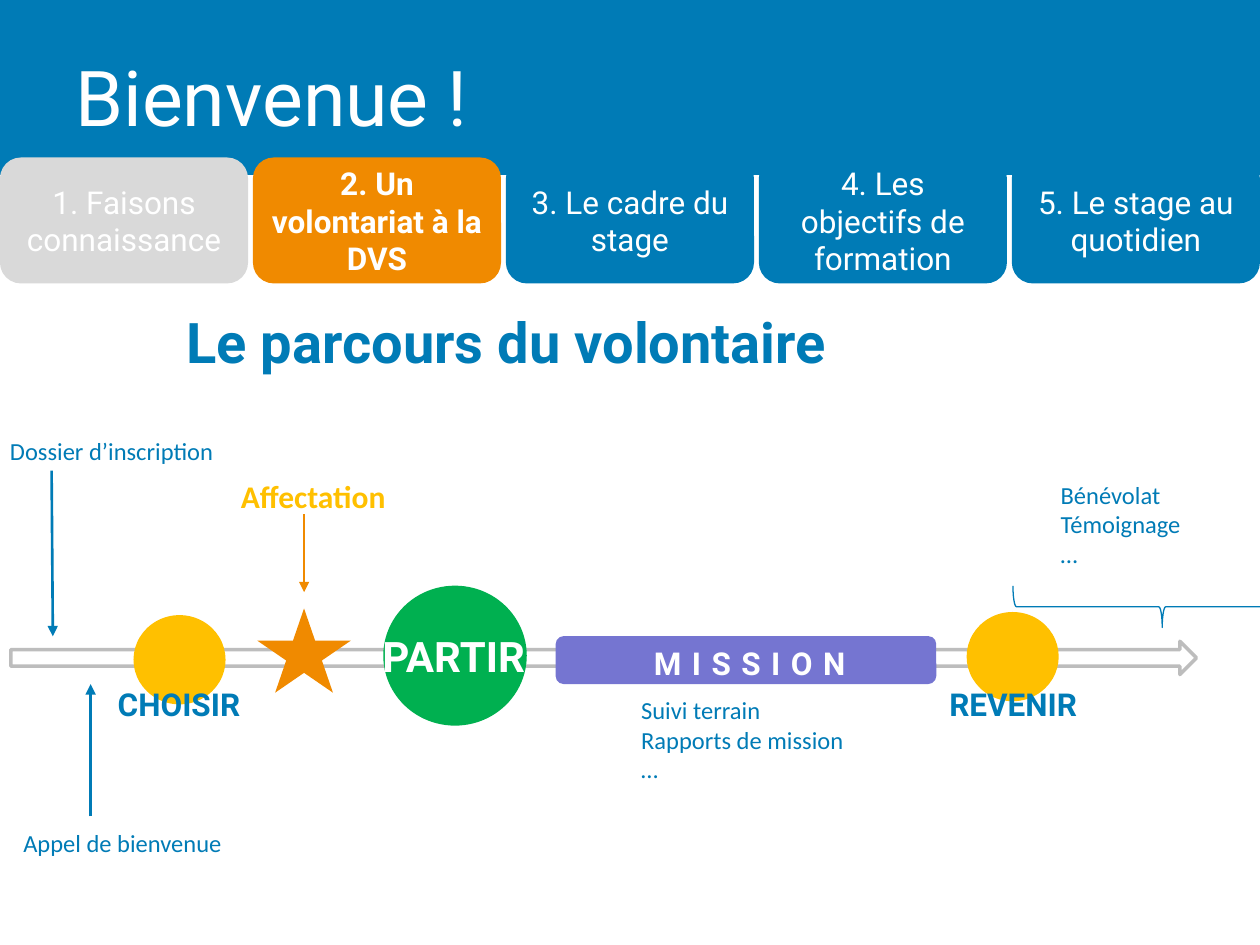
from pptx import Presentation
from pptx.dml.color import RGBColor
from pptx.enum.shapes import MSO_CONNECTOR, MSO_SHAPE
from pptx.enum.text import MSO_ANCHOR, PP_ALIGN
from pptx.oxml.ns import qn
from pptx.util import Pt
from lxml.etree import SubElement

BLUE, ORANGE, GOLD, WHITE = "007BB6", "F08A00", "FFC000", "FFFFFF"


def color(hue):
    return RGBColor.from_string(hue)


def write(frame, text, size=18, font="Roboto", hue=WHITE, bold=False,
          center=True, middle=False, gap=0, lead=None):
    frame.word_wrap = True
    frame.vertical_anchor = MSO_ANCHOR.MIDDLE if middle else MSO_ANCHOR.TOP
    for i, line in enumerate(text.split("\n")):
        para = frame.paragraphs[0] if i == 0 else frame.add_paragraph()
        para.alignment = PP_ALIGN.CENTER if center else PP_ALIGN.LEFT
        para.line_spacing = lead
        run = para.add_run()
        run.text = line
        run.font.name = font
        run.font.size = Pt(size)
        run.font.bold = bold
        run.font.color.rgb = color(hue)
        if gap:
            run.font._element.set("spc", str(gap * 100))


def label(slide, box, text, **style):
    frame = slide.shapes.add_textbox(*map(Pt, box)).text_frame
    write(frame, text, **style)


def note(slide, box, text):
    label(slide, box, text, size=14, font="Calibri", hue=BLUE, center=False)


def shape(slide, kind, box, fill=None, line=None, width=1):
    item = slide.shapes.add_shape(kind, *map(Pt, box))
    item.shadow.inherit = False
    if fill:
        item.fill.solid()
        item.fill.fore_color.rgb = color(fill)
    else:
        item.fill.background()
    if line:
        item.line.color.rgb = color(line)
        item.line.width = Pt(width)
    else:
        item.line.fill.background()
    return item


def arrow(slide, ends, hue):
    link = slide.shapes.add_connector(MSO_CONNECTOR.STRAIGHT, *map(Pt, ends))
    link.line.color.rgb = color(hue)
    link.line.width = Pt(1.5)
    SubElement(link.line._get_or_add_ln(), qn("a:tailEnd"), type="triangle")
    SubElement(link._element.spPr, qn("a:effectLst"))


def header(slide):
    shape(slide, MSO_SHAPE.RECTANGLE, (0, 0, 720, 100), BLUE)
    tabs = [
        ("1. Faisons connaissance", "D9D9D9"),
        ("2. Un volontariat à la DVS", ORANGE),
        ("3. Le cadre du stage", BLUE),
        ("4. Les objectifs de formation", BLUE),
        ("5. Le stage au quotidien", BLUE),
    ]
    wide = 141.8
    step = (720 - wide) / (len(tabs) - 1)
    for i, (text, fill) in enumerate(tabs):
        tab = shape(slide, MSO_SHAPE.ROUNDED_RECTANGLE,
                    (i * step, 90, wide, 72), fill)
        write(tab.text_frame, text, bold=fill == ORANGE, middle=True)
    label(slide, (-18, 181.4, 615, 36), "Le parcours du volontaire",
          size=32, hue=BLUE, bold=True, lead=0.75)
    label(slide, (36, 23, 648, 63.4), "Bienvenue !",
          size=44, center=False, middle=True)


def track(slide):
    shape(slide, MSO_SHAPE.RIGHT_ARROW, (6.2, 366.5, 677.5, 19),
          WHITE, "BDBDBD", 2)
    for kind, box, fill in [
        (MSO_SHAPE.OVAL, (76.3, 351.5, 52.6, 51), GOLD),
        (MSO_SHAPE.STAR_5_POINT, (147, 347.7, 53.5, 48.2), ORANGE),
        (MSO_SHAPE.OVAL, (552.4, 349.7, 52.6, 51), GOLD),
        (MSO_SHAPE.OVAL, (219, 334.7, 82, 80), "00B050"),
        (MSO_SHAPE.ROUNDED_RECTANGLE, (317.5, 363.5, 217.5, 27.4), "7575D1"),
    ]:
        shape(slide, kind, box, fill)
    for ends, hue in [
        ((29.5, 269, 30.2, 363.6), BLUE),
        ((51.8, 466.5, 51.8, 391), BLUE),
        ((173.8, 294, 173.8, 338.4), ORANGE),
    ]:
        arrow(slide, ends, hue)
    brace = shape(slide, MSO_SHAPE.LEFT_BRACE, (652.3, 261.4, 23.8, 170.6),
                  line=BLUE, width=0.75)
    brace.rotation = 270


def names(slide):
    label(slide, (46, 388, 112.5, 29), "CHOISIR", hue=BLUE, bold=True)
    label(slide, (522.7, 388, 112.5, 29), "REVENIR", hue=BLUE, bold=True)
    label(slide, (203, 357, 112.5, 36), "PARTIR", size=24, bold=True)
    label(slide, (351.4, 364.3, 154, 29), "MISSION", bold=True, gap=6)
    label(slide, (129, 269.3, 100, 29), "Affectation",
          font="Calibri", hue=GOLD, bold=True)
    note(slide, (-1.4, 245.5, 162, 24), "Dossier d’inscription")
    note(slide, (6.2, 469.7, 140, 24), "Appel de bienvenue")
    note(slide, (599, 270.7, 100, 58), "Bénévolat\nTémoignage\n…")
    note(slide, (359.3, 393.8, 133, 58),
         "Suivi terrain\nRapports de mission\n…")


def main():
    deck = Presentation()
    deck.slide_width, deck.slide_height = Pt(720), Pt(540)
    slide = deck.slides.add_slide(deck.slide_layouts[6])
    header(slide)
    track(slide)
    names(slide)
    deck.save("out.pptx")


if __name__ == "__main__":
    main()
